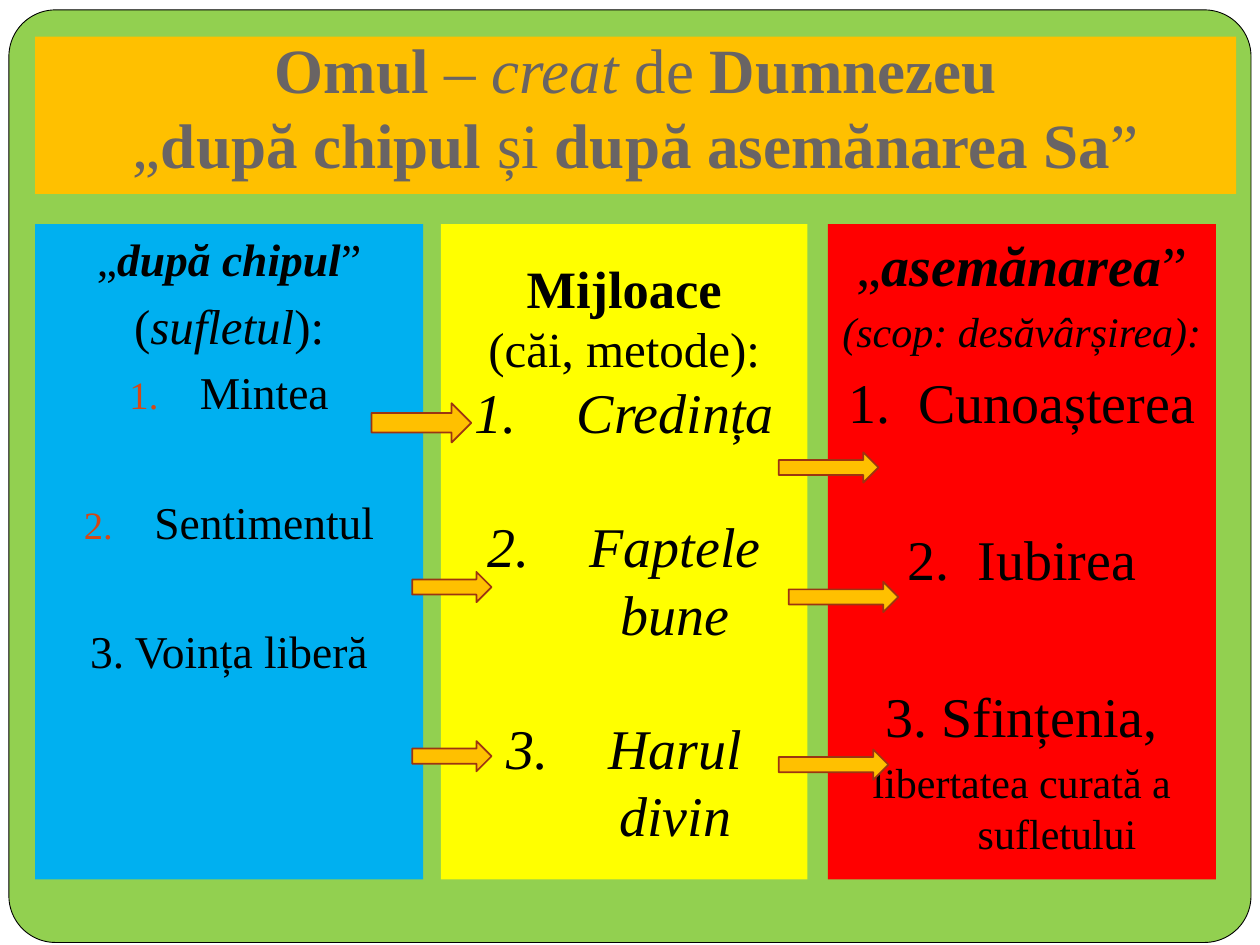
from dataclasses import dataclass

from lxml import etree
from pptx import Presentation, util as u
from pptx.dml.color import RGBColor
from pptx.enum import shapes, text
from pptx.oxml import ns


@dataclass(frozen=True)
class Theme:
    """Colours, font and type sizes of the slide."""
    face: str = "Times New Roman"
    white: str = "FFFFFF"
    green: str = "92D050"
    gold: str = "FFC000"
    blue: str = "00B0F0"
    yellow: str = "FFFF00"
    red: str = "FF0000"
    ink: str = "000000"
    gray: str = "696464"
    rust: str = "9C3511"
    number: str = "D34817"
    title: int = 36
    large: int = 32
    head: int = 30
    mid: int = 28
    item: int = 26
    small: int = 24


T = Theme()


def paint(fill, hue):
    """Give a fill one solid colour."""
    fill.solid()
    fill.fore_color.rgb = RGBColor.from_string(hue)


def place(shape, box):
    """Move a shape to a box in centimetres."""
    shape.left, shape.top, shape.width, shape.height = map(u.Cm, box)


def draw(slide, kind, box, fill, line=None, weight=1):
    """Add a flat preset shape."""
    shape = slide.shapes.add_shape(kind, *map(u.Cm, box))
    shape.shadow.inherit = False
    paint(shape.fill, fill)
    if line:
        paint(shape.line.fill, line)
        shape.line.width = u.Pt(weight)
    else:
        shape.line.fill.background()
    return shape


def write(para, parts, size, hue):
    """Fill a centred paragraph with (text, style) runs."""
    para.alignment = text.PP_ALIGN.CENTER
    for words, style in parts:
        if words == "\n":
            para.add_line_break()
            continue
        run = para.add_run()
        run.text = words
        font = run.font
        font.name, font.size = T.face, u.Pt(size)
        font.bold, font.italic = "b" in style, "i" in style
        font.color.rgb = RGBColor.from_string(hue)


def mark(para, indent, number, hue):
    """Set the hanging indent and the automatic number."""
    props = para._p.get_or_add_pPr()
    props.set("marL", str(u.Cm(indent)))
    props.set("indent", str(-u.Cm(indent)))
    if number and hue:
        tint = etree.SubElement(props, ns.qn("a:buClr"))
        etree.SubElement(tint, ns.qn("a:srgbClr"), val=hue)
        etree.SubElement(props, ns.qn("a:buSzPct"), val="85000")
    if number:
        etree.SubElement(props, ns.qn("a:buFont"), typeface="+mj-lt")
        etree.SubElement(props, ns.qn("a:buAutoNum"), type="arabicPeriod")
    else:
        etree.SubElement(props, ns.qn("a:buNone"))


def frame(slide, box):
    """Draw the rounded green sheet behind everything."""
    paint(slide.background.fill, T.white)
    sheet = draw(slide, shapes.MSO_SHAPE.ROUNDED_RECTANGLE, box, T.green, T.ink, 0.5)
    sheet.adjustments[0] = 0.05
    slide.shapes._spTree.insert(2, sheet._element)


def heading(shape, box, parts):
    """Format the title band."""
    place(shape, box)
    paint(shape.fill, T.gold)
    body = shape.text_frame
    body.auto_size = text.MSO_AUTO_SIZE.NONE
    body.vertical_anchor = text.MSO_ANCHOR.BOTTOM
    body.margin_bottom = u.Cm(0.25)
    write(body.paragraphs[0], parts, T.title, T.gray)


def column(shape, box, rows, fill, anchor=text.MSO_ANCHOR.TOP, hue=None):
    """Fill a column with (parts, size, indent, number, space) rows."""
    place(shape, box)
    paint(shape.fill, fill)
    body = shape.text_frame
    body.word_wrap = True
    body.auto_size = text.MSO_AUTO_SIZE.NONE
    body.vertical_anchor = anchor
    for i, (parts, size, indent, number, space) in enumerate(rows):
        para = body.add_paragraph() if i else body.paragraphs[0]
        para.space_before = u.Pt(space)
        mark(para, indent, number, hue)
        write(para, parts, size, T.ink)


def arrows(slide, box, spots):
    """Draw arrows at offsets from the corner of a box."""
    for x, y, wide, high in spots:
        spot = (box[0] + x, box[1] + y, wide, high)
        draw(slide, shapes.MSO_SHAPE.RIGHT_ARROW, spot, T.gold, T.rust)


def main():
    """Build the slide and save it."""
    deck = Presentation()
    deck.slide_width, deck.slide_height = u.Cm(25.4), u.Cm(19.05)
    slide = deck.slides.add_slide(deck.slide_layouts[1])
    frame(slide, (0.18, 0.2, 25.04, 18.8))
    heading(slide.shapes.title, (0.71, 0.74, 24.21, 3.17), [
        ("Omul", "b"), (" – ", ""), ("creat", "i"), (" de ", ""),
        ("Dumnezeu", "b"), ("\n", ""), ("„", ""), ("după chipul ", "b"),
        ("și ", ""), ("după asemănarea Sa", "b"), ("”", "")])

    left, top, high = 0.71, 4.52, 13.21
    image = [
        ([("„", ""), ("după chipul", "bi"), ("”", "")], T.item, 0.76, False, 0),
        ([("(", ""), ("sufletul", "i"), ("):", "")], T.mid, 0.76, False, 5.8),
        ([("Mintea", "")], T.item, 1.42, True, 5.8),
        ([("Sentimentul", "")], T.item, 1.42, True, 42.8),
        ([("3. Voința liberă", "")], T.item, 1.42, False, 42.8)]
    column(slide.placeholders[1], (left, top, 7.82, high), image, T.blue, hue=T.number)

    means = [
        ([("Mijloace", "b")], T.head, 2.06, False, 0),
        ([("(căi, metode):", "")], T.mid, 2.06, False, 0),
        ([("Credința", "i")], T.large, 2.06, True, 0),
        ([("Faptele bune", "i")], T.large, 2.06, True, 38.4),
        ([("Harul divin", "i")], T.large, 2.06, True, 38.4)]
    box = (8.89, top, 7.39, high)
    panel = draw(slide, shapes.MSO_SHAPE.RECTANGLE, box, T.yellow)
    column(panel, box, means, T.yellow, text.MSO_ANCHOR.MIDDLE)

    goal = [
        ([("„", ""), ("asemănarea", "bi"), ("”", "")], T.large, 0.97, False, 0),
        ([("(scop: desăvârșirea):", "i")], T.small, 0.97, False, 4.8),
        ([("Cunoașterea", "")], T.large, 1.42, True, 6.4),
        ([("Iubirea", "")], T.large, 1.42, True, 51.2),
        ([("3. Sfințenia,", "")], T.large, 1.42, False, 51.2),
        ([("libertatea curată a sufletului", "")], T.small, 1.42, False, 4.8)]
    box = (16.69, top, 7.82, high)
    panel = draw(slide, shapes.MSO_SHAPE.RECTANGLE, box, T.red)
    column(panel, box, goal, T.red)

    arrows(slide, (left, top), [
        (7.6, 7.01, 1.6, 0.61), (7.6, 10.42, 1.6, 0.61),
        (14.99, 4.6, 2.01, 0.61), (15.19, 7.21, 2.21, 0.61),
        (14.99, 10.59, 2.21, 0.61), (6.78, 3.61, 2.01, 0.79)])
    deck.save("out.pptx")


if __name__ == "__main__":
    main()
